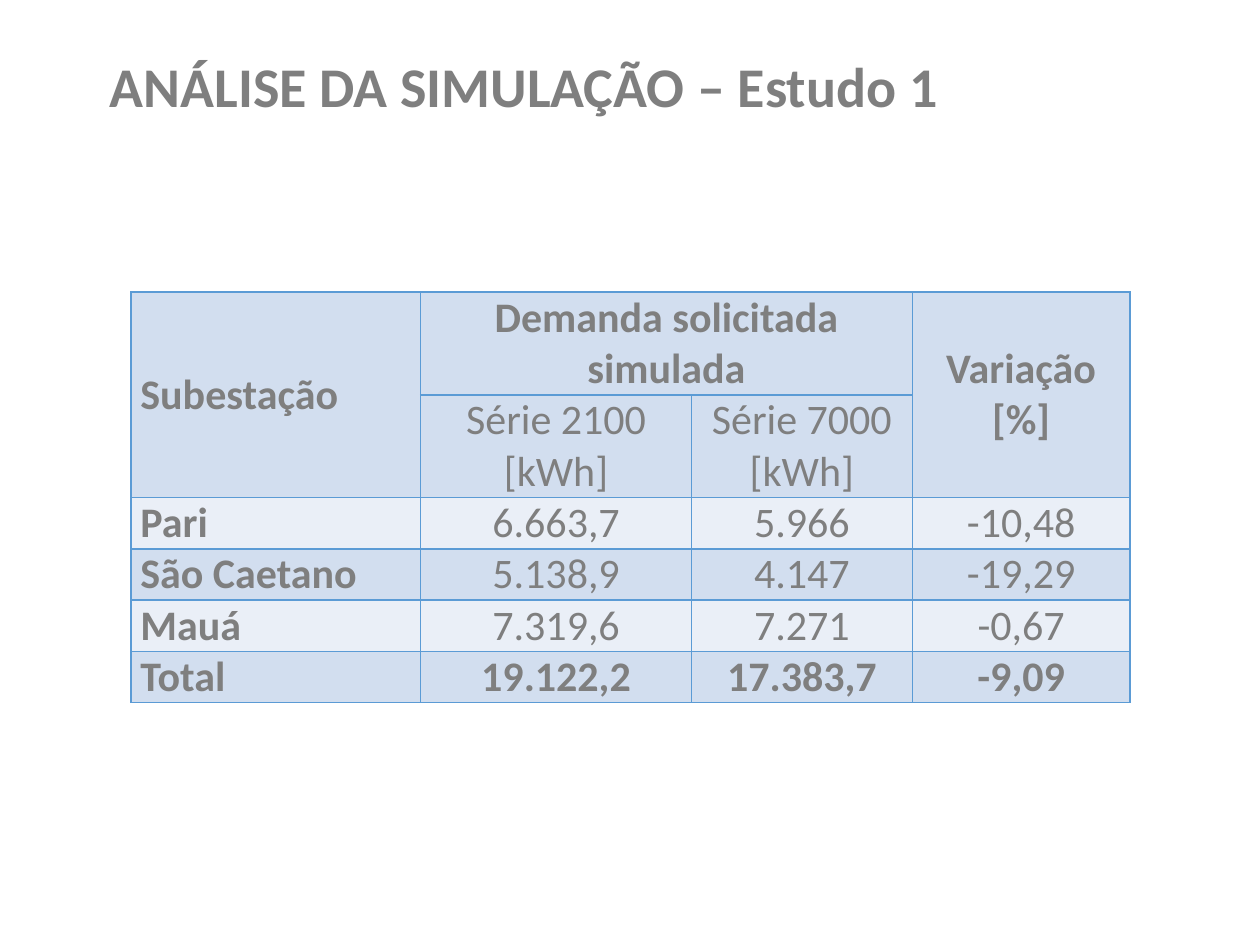
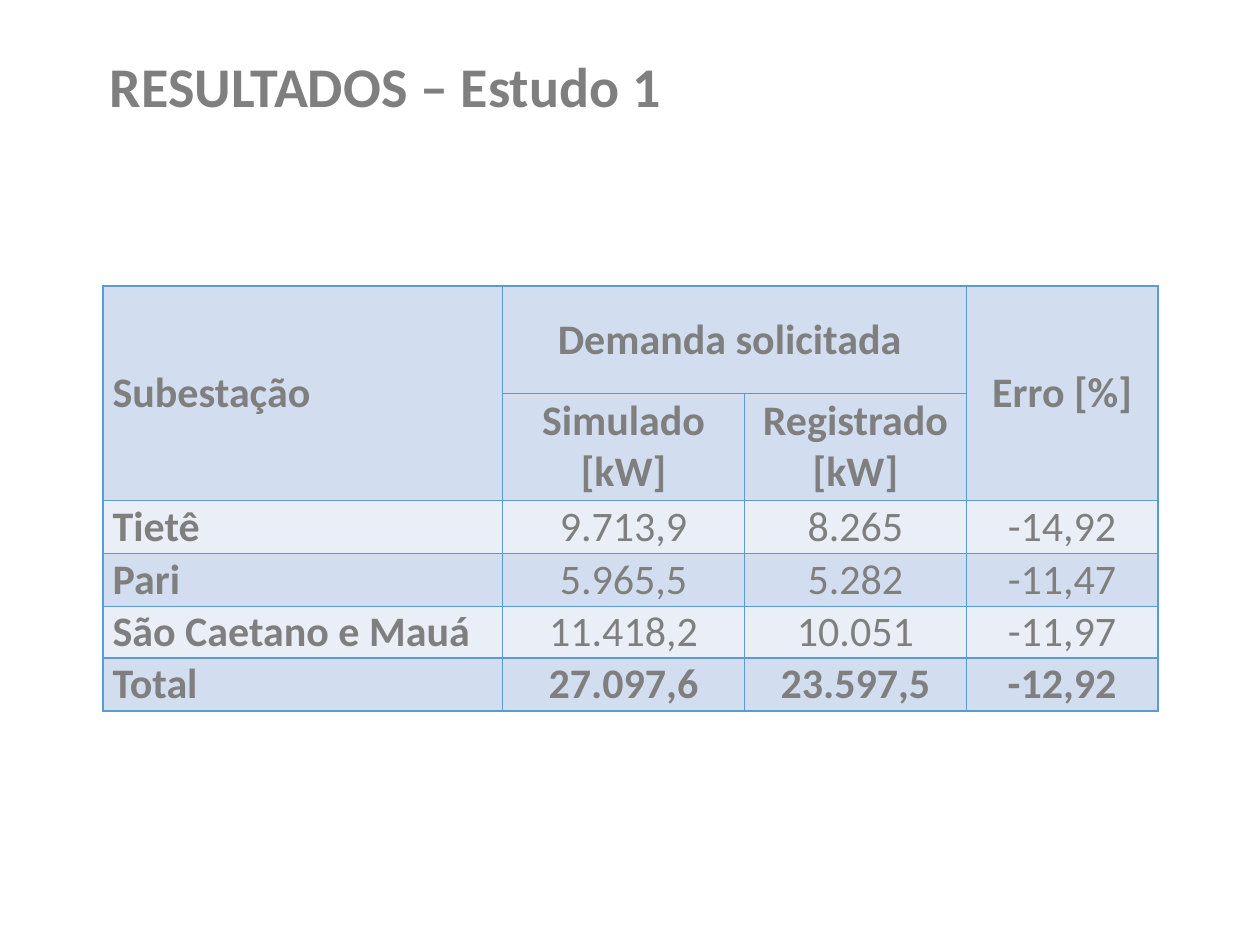
from dataclasses import dataclass

import pptx
import pptx.dml.color
import pptx.enum.text
import pptx.oxml
import pptx.oxml.ns
import pptx.presentation
import pptx.table
import pptx.text.text
import pptx.util
from pptx.util import Cm


@dataclass(frozen=True)
class Theme:
    font: str = "Calibri"
    text: str = "7F7F7F"
    border: str = "5B9BD5"
    dark_band: str = "D2DEEF"
    light_band: str = "EAEFF7"
    title_size: int = 32
    table_size: int = 24
    border_width: int = 1


@dataclass(frozen=True)
class StudyTable:
    title: str
    left: float
    top: float
    column_widths: tuple[float, ...]
    row_heights: tuple[float, ...]
    group_heading: str
    series_headings: tuple[str, str]
    series_bold: bool
    difference_heading: str
    records: tuple[tuple[str, ...], ...]


THEME = Theme()
HEADER_ROWS = 2
TITLE_ONLY_LAYOUT = 5
CELL_MARGIN = 0.19

STUDIES = (
    StudyTable(
        title="ANÁLISE DA SIMULAÇÃO – Estudo 1",
        left=2.64,
        top=5.89,
        column_widths=(5.84, 5.46, 4.45, 4.39),
        row_heights=(2.07, 2.07, 1.03, 1.03, 1.03, 1.03),
        group_heading="Demanda solicitada simulada",
        series_headings=("Série 2100 [kWh]", "Série 7000 [kWh]"),
        series_bold=False,
        difference_heading="Variação [%]",
        records=(
            ("Pari", "6.663,7", "5.966", "-10,48"),
            ("São Caetano", "5.138,9", "4.147", "-19,29"),
            ("Mauá", "7.319,6", "7.271", "-0,67"),
            ("Total", "19.122,2", "17.383,7", "-9,09"),
        ),
    ),
    StudyTable(
        title="RESULTADOS – Estudo 1",
        left=2.08,
        top=5.77,
        column_widths=(8.05, 4.88, 4.47, 3.86),
        row_heights=(2.16, 2.16, 1.07, 1.07, 1.03, 1.07),
        group_heading="Demanda solicitada ",
        series_headings=("Simulado [kW]", "Registrado [kW]"),
        series_bold=True,
        difference_heading="Erro [%]",
        records=(
            ("Tietê", "9.713,9", "8.265", "-14,92"),
            ("Pari", "5.965,5", "5.282", "-11,47"),
            ("São Caetano e Mauá", "11.418,2", "10.051", "-11,97"),
            ("Total", "27.097,6", "23.597,5", "-12,92"),
        ),
    ),
)


def format_runs(paragraph: pptx.text.text._Paragraph, size: int, bold: bool) -> None:
    for run in paragraph.runs:
        run.font.name = THEME.font
        run.font.size = pptx.util.Pt(size)
        run.font.bold = bold
        run.font.color.rgb = pptx.dml.color.RGBColor.from_string(THEME.text)


def set_title(slide: pptx.slide.Slide, title: str) -> None:
    shape = slide.shapes.title
    shape.left, shape.top = Cm(1.96), Cm(0.99)
    shape.width, shape.height = Cm(19.63), Cm(1.63)
    text_frame = shape.text_frame
    text_frame.text = title
    text_frame.word_wrap = True
    text_frame.auto_size = pptx.enum.text.MSO_AUTO_SIZE.NONE
    text_frame.vertical_anchor = pptx.enum.text.MSO_ANCHOR.MIDDLE
    paragraph = text_frame.paragraphs[0]
    paragraph.alignment = pptx.enum.text.PP_ALIGN.LEFT
    paragraph.line_spacing = 0.9
    format_runs(paragraph, THEME.title_size, True)


def add_borders(cell: pptx.table._Cell) -> None:
    properties = cell._tc.get_or_add_tcPr()
    width = pptx.util.Pt(THEME.border_width)
    for side in ("lnL", "lnR", "lnT", "lnB"):
        properties.append(pptx.oxml.parse_xml(
            f'<a:{side} {pptx.oxml.ns.nsdecls("a")} w="{width}">'
            f'<a:solidFill><a:srgbClr val="{THEME.border}"/></a:solidFill>'
            f"</a:{side}>"
        ))


def fill_cell(cell: pptx.table._Cell, text: str, band: str, bold: bool, is_label: bool) -> None:
    alignment = pptx.enum.text.PP_ALIGN
    add_borders(cell)
    cell.fill.solid()
    cell.fill.fore_color.rgb = pptx.dml.color.RGBColor.from_string(band)
    cell.margin_left = cell.margin_right = Cm(CELL_MARGIN)
    cell.margin_top = cell.margin_bottom = 0
    cell.vertical_anchor = pptx.enum.text.MSO_ANCHOR.MIDDLE
    cell.text_frame.text = text
    paragraph = cell.text_frame.paragraphs[0]
    paragraph.alignment = alignment.JUSTIFY if is_label else alignment.CENTER
    format_runs(paragraph, THEME.table_size, bold)


def add_study_table(slide: pptx.slide.Slide, study: StudyTable) -> None:
    contents = (
        ("Subestação", study.group_heading, "", study.difference_heading),
        ("", *study.series_headings, ""),
        *study.records,
    )
    table = slide.shapes.add_table(
        len(contents), len(study.column_widths), Cm(study.left), Cm(study.top),
        Cm(sum(study.column_widths)), Cm(sum(study.row_heights)),
    ).table
    table.first_row = table.horz_banding = False
    for column, width in zip(table.columns, study.column_widths):
        column.width = Cm(width)
    for row, height in zip(table.rows, study.row_heights):
        row.height = Cm(height)

    last_row = len(contents) - 1
    for row_index, texts in enumerate(contents):
        is_light = row_index >= HEADER_ROWS and row_index % 2 == 0
        band = THEME.light_band if is_light else THEME.dark_band
        row_bold = row_index in (0, last_row) or (row_index == 1 and study.series_bold)
        for column_index, text in enumerate(texts):
            is_label = column_index == 0
            cell = table.cell(row_index, column_index)
            fill_cell(cell, text, band, row_bold or is_label, is_label)

    table.cell(0, 0).merge(table.cell(1, 0))
    table.cell(0, 1).merge(table.cell(0, 2))
    table.cell(0, 3).merge(table.cell(1, 3))


def add_study_slide(presentation: pptx.presentation.Presentation, study: StudyTable) -> None:
    slide = presentation.slides.add_slide(presentation.slide_layouts[TITLE_ONLY_LAYOUT])
    set_title(slide, study.title)
    add_study_table(slide, study)


def main() -> None:
    presentation = pptx.Presentation()
    presentation.slide_width, presentation.slide_height = Cm(25.4), Cm(19.05)
    for study in STUDIES:
        add_study_slide(presentation, study)
    presentation.save("out.pptx")


if __name__ == "__main__":
    main()
